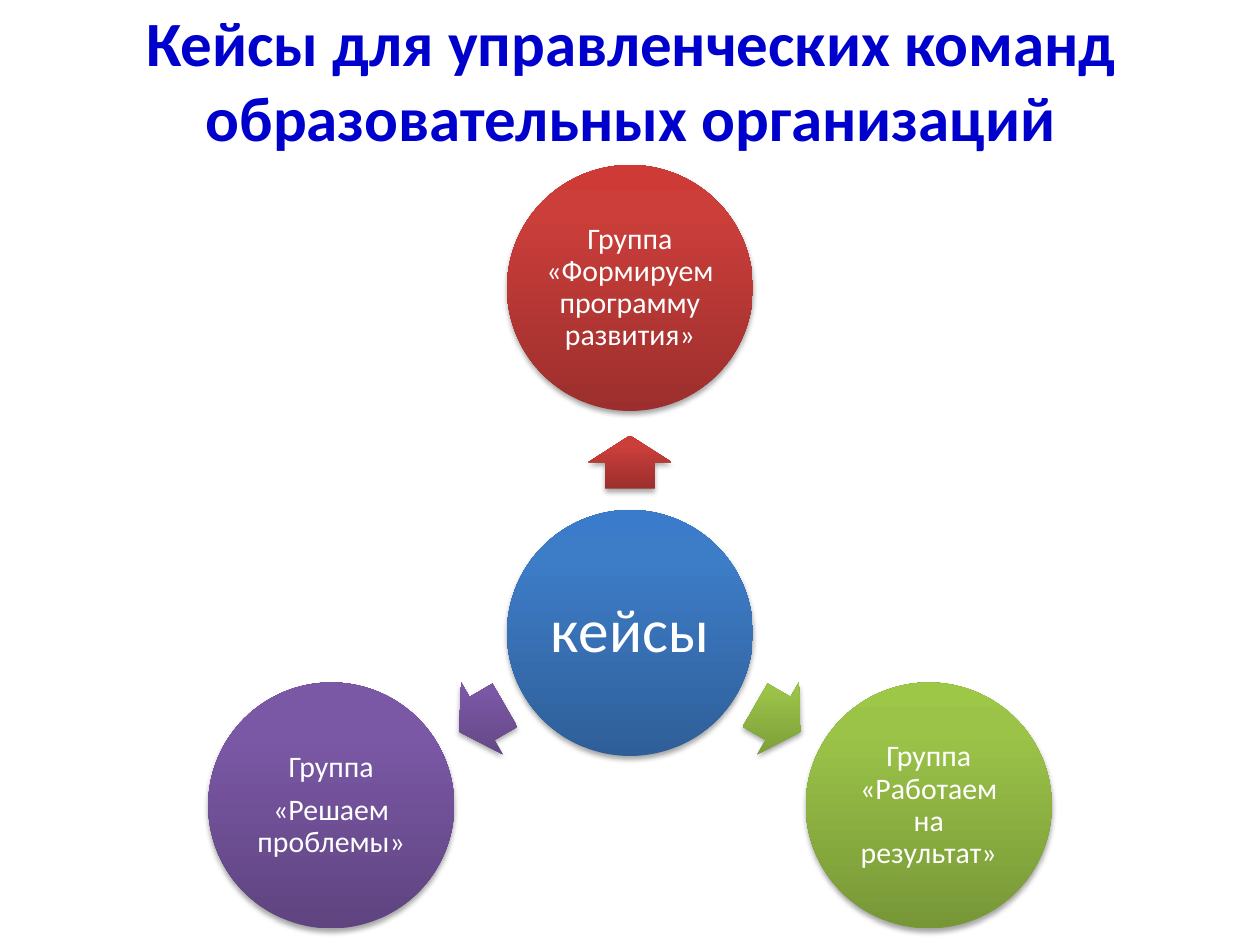
from math import cos, radians, sin

from lxml import etree
from pptx import Presentation
from pptx.dml.color import RGBColor
from pptx.enum.shapes import MSO_SHAPE
from pptx.enum.text import MSO_ANCHOR, PP_ALIGN
from pptx.oxml.ns import qn
from pptx.util import Emu, Pt

CIRCLE, ARROW = MSO_SHAPE.OVAL, MSO_SHAPE.RIGHT_ARROW
CENTER, MIDDLE = PP_ALIGN.CENTER, MSO_ANCHOR.MIDDLE

TITLE_BLUE = RGBColor(0x00, 0x00, 0xCC)
WHITE = RGBColor(0xFF, 0xFF, 0xFF)
BLACK = RGBColor(0x00, 0x00, 0x00)
BLUE = RGBColor(0x2F, 0x5F, 0x99), RGBColor(0x3D, 0x7C, 0xC7), RGBColor(0x3A, 0x7C, 0xCB)
RED = RGBColor(0x9C, 0x2F, 0x2D), RGBColor(0xCB, 0x3E, 0x3A), RGBColor(0xCE, 0x3B, 0x37)
GREEN = RGBColor(0x77, 0x97, 0x37), RGBColor(0x9B, 0xC3, 0x48), RGBColor(0x9D, 0xC7, 0x46)
PURPLE = RGBColor(0x5F, 0x44, 0x80), RGBColor(0x7B, 0x58, 0xA6), RGBColor(0x7C, 0x57, 0xA8)

TITLE = "Кейсы для управленческих команд образовательных организаций"
HUB = "кейсы"
GROUPS = [
    (270, RED, ["Группа «Формируем программу развития»"]),
    (30, GREEN, ["Группа «Работаем на результат»"]),
    (150, PURPLE, ["Группа", "«Решаем проблемы»"]),
]

HUB_X, HUB_Y = 630, 633
DIAMETER, ORBIT = 246, 345
ARROW_W, ARROW_H, ARROW_ORBIT = 53, 83, 171
STOPS = 0, 80, 100


def px(n):
    return Emu(round(n * 914400 / 126))


def write(tf, lines, size, color=WHITE, bold=False, inset=None, spacing=None, after=None):
    tf.word_wrap = True
    tf.vertical_anchor = MIDDLE
    if inset is not None:
        tf.margin_left = tf.margin_right = tf.margin_top = tf.margin_bottom = px(inset)
    for i, line in enumerate(lines):
        p = tf.add_paragraph() if i else tf.paragraphs[0]
        p.alignment = CENTER
        p.line_spacing = spacing
        p.space_after = after
        r = p.add_run()
        r.text = line
        r.font.name, r.font.size, r.font.bold = "Calibri", Pt(size), bold
        r.font.color.rgb = color


def add_color(parent, color):
    return etree.SubElement(parent, qn("a:srgbClr"), val=str(color))


def add_glossy(shapes, kind, angle, distance, w, h, colors):
    x = HUB_X + distance * cos(radians(angle))
    y = HUB_Y + distance * sin(radians(angle))
    sp = shapes.add_shape(kind, px(x - w / 2), px(y - h / 2), px(w), px(h))
    sp.line.fill.background()
    sp.fill.gradient()
    sp.fill.gradient_angle = 90
    grad = sp._element.spPr.find(qn("a:gradFill"))
    grad.set("rotWithShape", "0")
    stops = grad.find(qn("a:gsLst"))
    stops.clear()
    for pos, color in zip(STOPS, colors):
        add_color(etree.SubElement(stops, qn("a:gs"), pos=str(pos * 1000)), color)
    sp.shadow.inherit = False
    effects = sp._element.spPr.find(qn("a:effectLst"))
    shadow = etree.SubElement(effects, qn("a:outerShdw"), blurRad=str(Pt(3.1)),
                              dist=str(Pt(1.8)), dir="5400000", rotWithShape="0")
    etree.SubElement(add_color(shadow, BLACK), qn("a:alpha"), val="35000")
    return sp


def add_circle(shapes, angle, distance, colors, lines, size, inset):
    sp = add_glossy(shapes, CIRCLE, angle, distance, DIAMETER, DIAMETER, colors)
    write(sp.text_frame, lines, size, inset=inset, spacing=0.9, after=Pt(round(size * 0.35)))


def main():
    prs = Presentation()
    prs.slide_width, prs.slide_height = px(1260), px(945)
    s = prs.slides.add_slide(prs.slide_layouts[5])

    title = s.shapes.title
    title.left, title.top, title.width, title.height = px(64), px(0), px(1134), px(158)
    write(title.text_frame, [TITLE], 36, color=TITLE_BLUE, bold=True)

    add_circle(s.shapes, 0, 0, BLUE, [HUB], 35, inset=6)
    for angle, colors, lines in GROUPS:
        arrow = add_glossy(s.shapes, ARROW, angle, ARROW_ORBIT, ARROW_W, ARROW_H, colors)
        arrow.rotation = angle
        arrow.adjustments[0], arrow.adjustments[1] = 0.6, 0.5
        add_circle(s.shapes, angle, ORBIT, colors, lines, 17, inset=3)

    prs.save("out.pptx")


if __name__ == "__main__":
    main()
